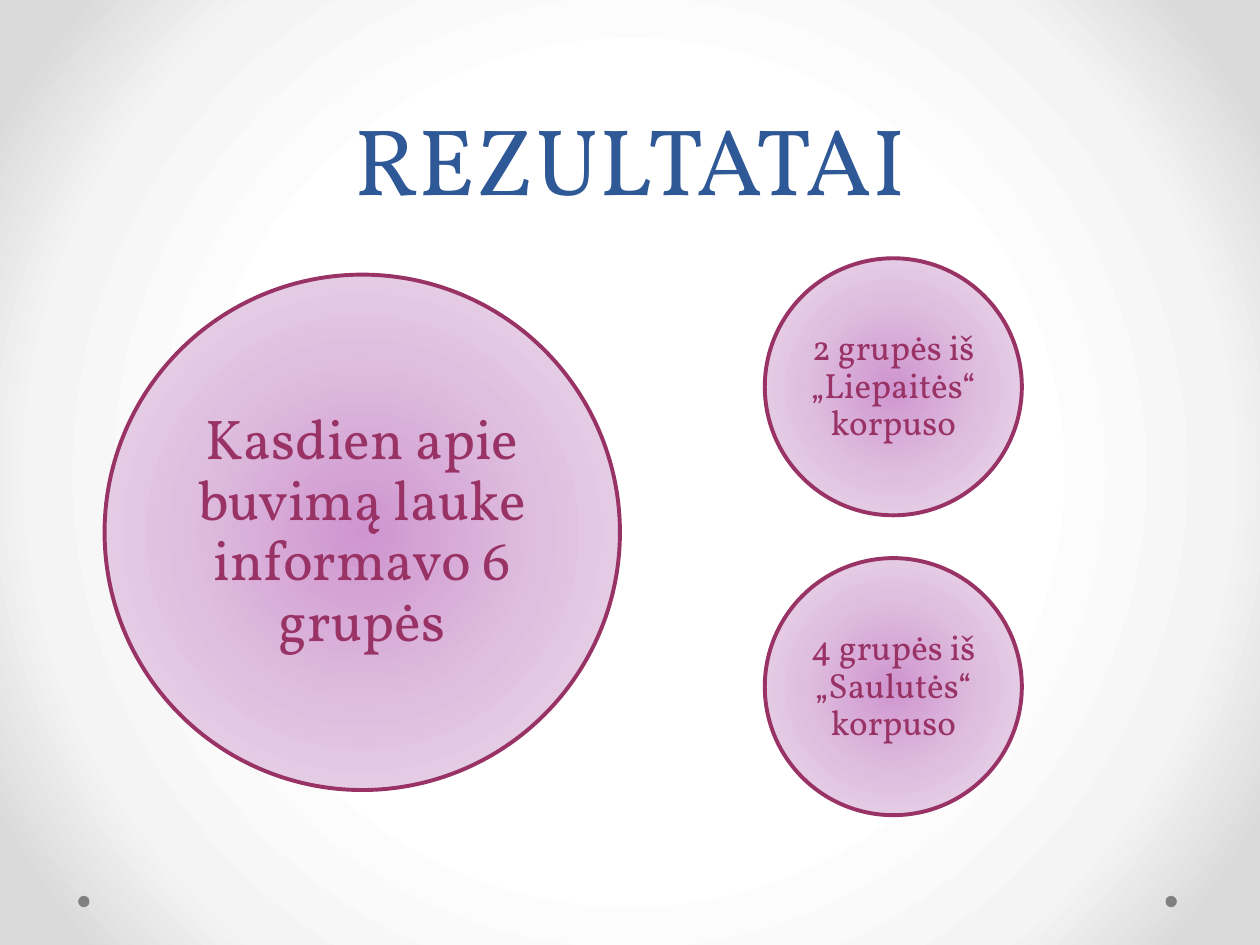
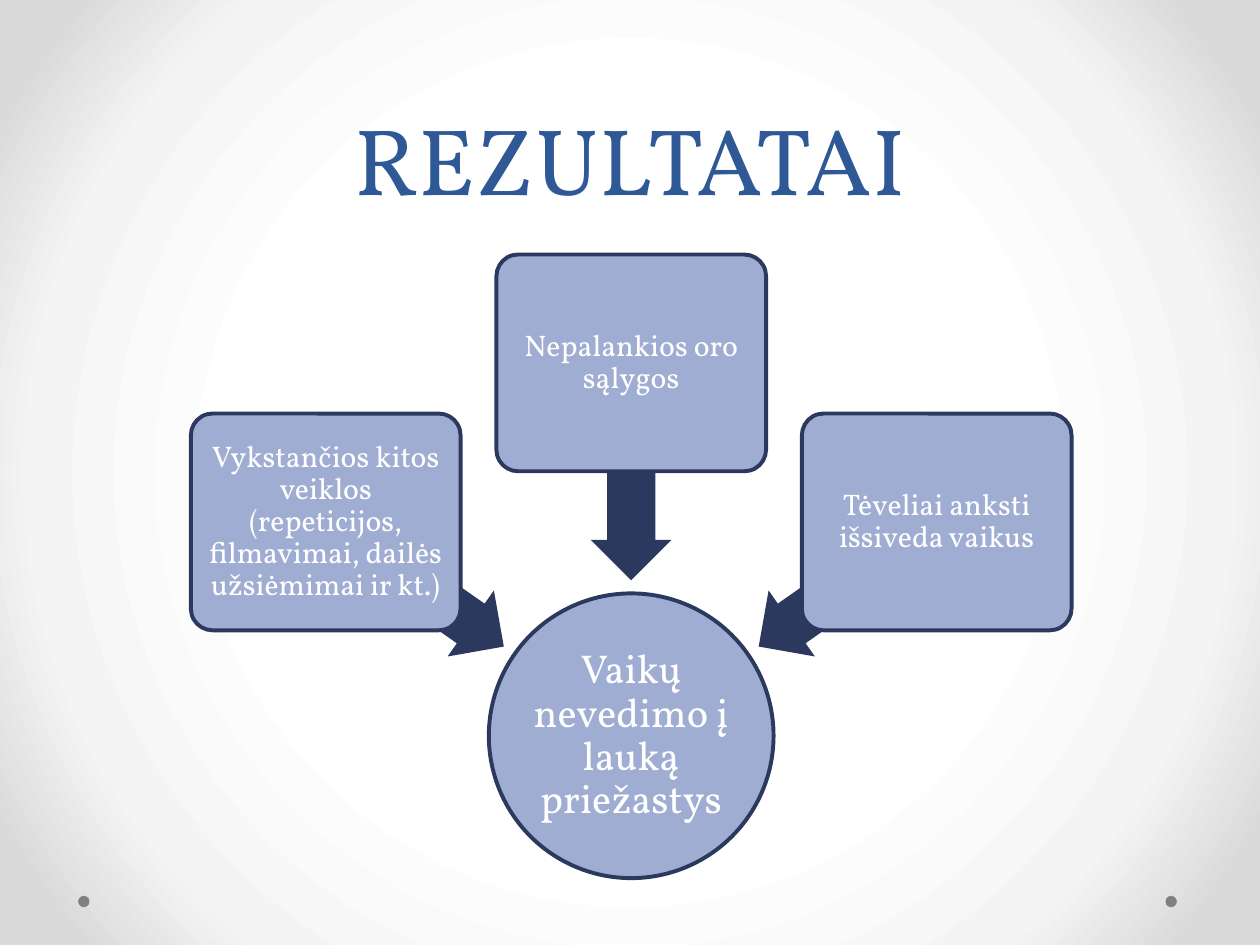
from math import cos, radians, sin

from lxml.etree import SubElement
from pptx import Presentation
from pptx.dml.color import RGBColor
from pptx.enum.shapes import MSO_SHAPE
from pptx.enum.text import MSO_ANCHOR, PP_ALIGN
from pptx.oxml.ns import qn
from pptx.util import Inches, Pt

FONT = "Vollkorn"
TITLE_BLUE = RGBColor(0x2F, 0x58, 0x97)
DOT_GREY = RGBColor(0x80, 0x80, 0x80)
PLUM = RGBColor(0x99, 0x33, 0x66)
PERIWINKLE = RGBColor(0xA0, 0xAD, 0xD2)
NAVY = RGBColor(0x2C, 0x39, 0x5E)
WHITE = RGBColor(0xFF, 0xFF, 0xFF)
BACKDROP_STOPS = {50: WHITE, 76: RGBColor(0xF4, 0xF4, 0xF4), 92: RGBColor(0xDA, 0xDA, 0xDA)}
LILAC_STOPS = {
    0: RGBColor(0xCF, 0x95, 0xCF),
    50: RGBColor(0xDF, 0xBF, 0xDF),
    100: RGBColor(0xEF, 0xE0, 0xEF),
}

COLUMNS, ROWS = 100, 75
CELL = Inches(0.1)

REASONS = [
    "Vykstančios kitos veiklos (repeticijos, filmavimai, dailės užsiėmimai ir kt.)",
    "Nepalankios oro sąlygos",
    "Tėveliai anksti išsiveda vaikus",
]


def cells(*values):
    return [round(value * CELL) for value in values]


def around(x, y, width, height):
    """Return the grid box of the given size centred on x, y."""
    return x - width / 2, y - height / 2, width, height


def radial_fill(fill, properties, stops):
    """Replace the fill held by the properties element with a centred circular gradient."""
    fill.solid()
    solid = properties().find(qn("a:solidFill"))
    gradient = solid.makeelement(qn("a:gradFill"), {"rotWithShape": "1"})
    stop_list = SubElement(gradient, qn("a:gsLst"))
    for percent, color in stops.items():
        stop = SubElement(stop_list, qn("a:gs"), pos=str(percent * 1000))
        SubElement(stop, qn("a:srgbClr"), val=str(color))
    path = SubElement(gradient, qn("a:path"), {"path": "circle"})
    SubElement(path, qn("a:fillToRect"), dict.fromkeys("ltrb", "50000"))
    solid.getparent().replace(solid, gradient)


def write_text(shape, text, size, color, inset, line_spacing, anchor=MSO_ANCHOR.MIDDLE):
    frame = shape.text_frame
    frame.word_wrap = True
    frame.vertical_anchor = anchor
    for side, margin in zip(("left", "right", "top", "bottom"), inset * 2):
        setattr(frame, f"margin_{side}", Inches(margin))
    paragraph = frame.paragraphs[0]
    paragraph.alignment = PP_ALIGN.CENTER
    paragraph.line_spacing = line_spacing
    run = paragraph.add_run()
    run.text = text
    for name, value in {"name": FONT, "size": Pt(size)}.items():
        setattr(run.font, name, value)
    run.font.color.rgb = color


def add_figure(slide, kind, box, fill, outline=None):
    """Add a preset shape; fill is one colour or a dict of gradient stops."""
    shape = slide.shapes.add_shape(kind, *cells(*box))
    shape.shadow.inherit = False
    if isinstance(fill, dict):
        radial_fill(shape.fill, lambda: shape.element.spPr, fill)
    else:
        shape.fill.solid()
        shape.fill.fore_color.rgb = fill
    if outline is None:
        shape.line.fill.background()
    else:
        shape.line.color.rgb = outline
        shape.line.width = Pt(2.25)
    return shape


def add_lilac_circle(slide, left, top, diameter, text, size, inset):
    circle = add_figure(slide, MSO_SHAPE.OVAL, (left, top, diameter, diameter), LILAC_STOPS, PLUM)
    write_text(circle, text, size, PLUM, (inset, inset), 0.9)


def add_arrow(slide, x, y, rotation):
    arrow = add_figure(slide, MSO_SHAPE.LEFT_ARROW, around(x, y, 17.3, 6.4), NAVY)
    arrow.rotation = rotation
    arrow.adjustments[0] = 0.6
    arrow.adjustments[1] = 0.5


def add_reason(slide, x, y, text):
    box = add_figure(
        slide, MSO_SHAPE.ROUNDED_RECTANGLE, around(x, y, 21.4, 17.2), PERIWINKLE, NAVY
    )
    box.adjustments[0] = 0.1
    write_text(box, text, 17, WHITE, (0.04, 0.04), 0.9)


def add_results_slide(presentation):
    """Add a slide with the shared corner dots and title."""
    slide = presentation.slides.add_slide(presentation.slide_layouts[6])
    for left in (92.5, 6.2):
        add_figure(slide, MSO_SHAPE.OVAL, (left, 71.1, 0.9, 0.9), DOT_GREY)
    title = slide.shapes.add_textbox(*cells(5, 0, COLUMNS - 10, 17.5))
    write_text(title, "REZULTATAI", 54, TITLE_BLUE, (0.1, 0.05), Pt(58), MSO_ANCHOR.BOTTOM)
    # Side margins are wide and top and bottom margins narrow on the title only.
    title.text_frame.margin_right = Inches(0.1)
    title.text_frame.margin_top = Inches(0.05)
    return slide


def add_group_counts(slide):
    for row, text in enumerate(
        ("2 grupės iš „Liepaitės“ korpuso", "4 grupės iš „Saulutės“ korpuso")
    ):
        add_lilac_circle(slide, 60.7, 20.5 + 23.8 * row, 20.4, text, 20, 0.03)
    add_lilac_circle(
        slide, 8.3, 21.8, 40.9, "Kasdien apie buvimą lauke informavo 6 grupės", 32, 0.04
    )


def add_reasons(slide):
    """Place the reasons on an arc over the hub, each with an arrow towards it."""
    hub_x, hub_y = 50.1, 58.4
    hub = add_figure(slide, MSO_SHAPE.OVAL, around(hub_x, hub_y, 22.6, 22.6), PERIWINKLE, NAVY)
    write_text(hub, "Vaikų nevedimo į lauką priežastys", 23, WHITE, (0.02, 0.02), 0.9)
    for index, reason in enumerate(REASONS):
        angle = 215 + 55 * index
        across, down = cos(radians(angle)), sin(radians(angle))
        add_arrow(slide, hub_x + 21 * across, hub_y + 21 * down, angle - 180 + 180)
        add_reason(slide, hub_x + 29.6 * across, hub_y + 29.6 * down, reason)


def main():
    presentation = Presentation()
    presentation.slide_width, presentation.slide_height = cells(COLUMNS, ROWS)
    master = presentation.slide_master
    radial_fill(
        master.background.fill, lambda: master.element.find(".//" + qn("p:bgPr")), BACKDROP_STOPS
    )
    add_group_counts(add_results_slide(presentation))
    add_reasons(add_results_slide(presentation))
    presentation.save("out.pptx")


if __name__ == "__main__":
    main()
